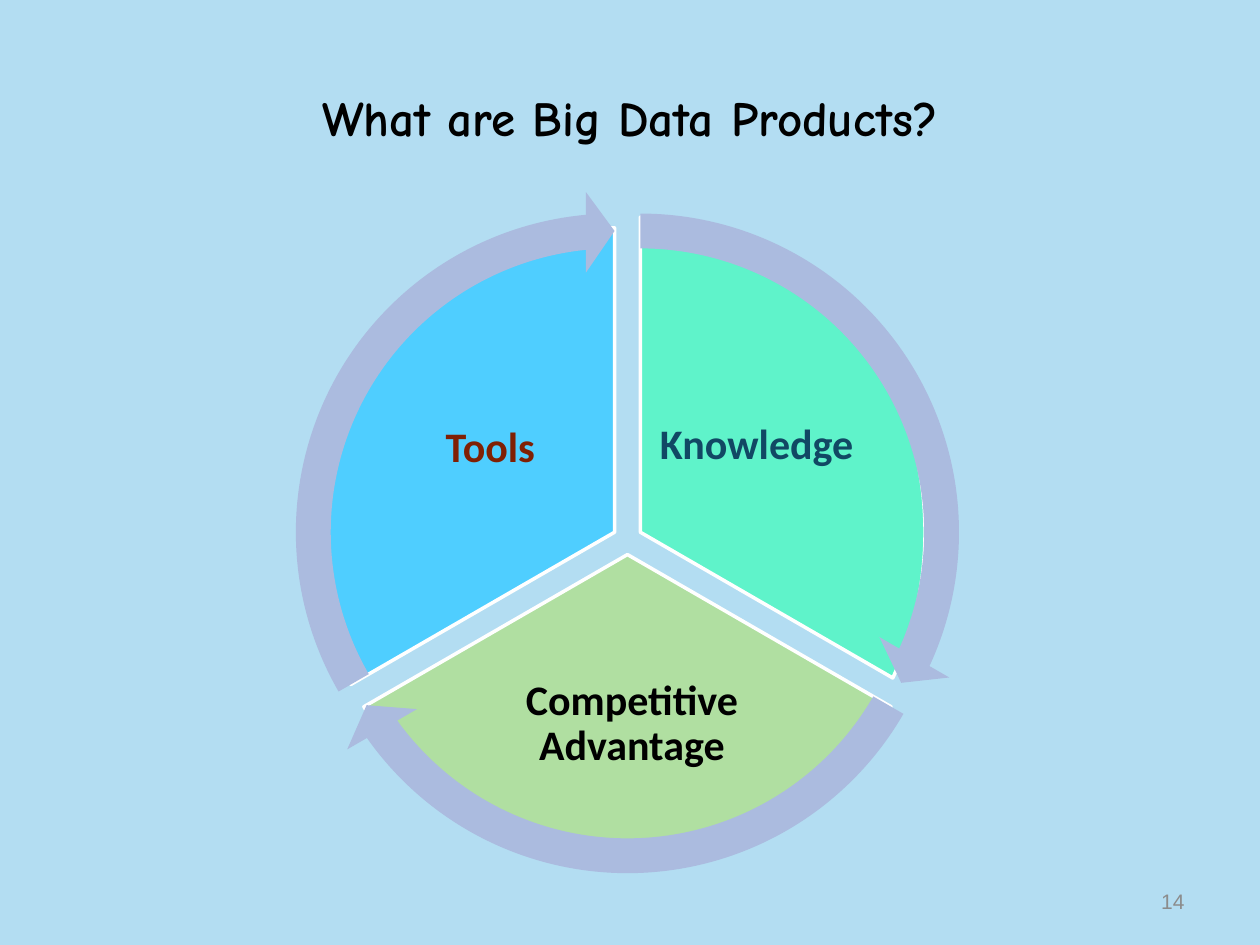
from math import cos, radians, sin

from pptx import Presentation
from pptx.dml.color import RGBColor
from pptx.enum.shapes import MSO_SHAPE
from pptx.enum.text import MSO_ANCHOR, PP_ALIGN
from pptx.util import Cm, Pt

SKY = RGBColor(0xB3, 0xDD, 0xF2)
MINT = RGBColor(0x5F, 0xF3, 0xCA)
GREEN = RGBColor(0xB0, 0xDF, 0xA1)
BLUE = RGBColor(0x4F, 0xCE, 0xFF)
LILAC = RGBColor(0xAB, 0xBB, 0xDF)
NAVY = RGBColor(0x11, 0x48, 0x64)
RUST = RGBColor(0x80, 0x20, 0x04)
GRAY = RGBColor(0x8C, 0x8C, 0x8C)
BLACK = RGBColor(0, 0, 0)
WHITE = RGBColor(0xFF, 0xFF, 0xFF)

# Angles are in degrees; shape adjustments count 0.6 to a degree.
UNIT = 0.6
TIP = 3.275
PUSH = 0.3
PIE = 12.27
RING = 13.77

# label, text colour, fill, start, end, pie size, label box within the wheel
PARTS = [
    ("Knowledge", NAVY, MINT, 270, 30, (11.48, 12.7), (7.7, 3.35, 4.09, 3.78)),
    ("Competitive Advantage", BLACK, GREEN, 30, 150, (PIE, PIE), (3.94, 9.26, 6.58, 3.2)),
    ("Tools", RUST, BLUE, 150, 270, (PIE, PIE), (2.19, 3.47, 4.37, 3.66)),
]


def place(shape, box):
    shape.left, shape.top, shape.width, shape.height = [Cm(n) for n in box]


def write(shape, text, font, size, color, bold=False, align=PP_ALIGN.CENTER):
    frame = shape.text_frame
    frame.word_wrap = True
    frame.vertical_anchor = MSO_ANCHOR.MIDDLE
    para = frame.paragraphs[0]
    para.alignment = align
    run = para.add_run()
    run.text = text
    run.font.name = font
    run.font.size = Pt(size)
    run.font.bold = bold
    run.font.color.rgb = color
    return frame


def draw(shapes, kind, mid, size, fill, adjust):
    """Add a filled shape centred on mid."""
    (x, y), (w, h) = mid, size
    shape = shapes.add_shape(kind, Cm(x - w / 2), Cm(y - h / 2), Cm(w), Cm(h))
    shape.shadow.inherit = False
    shape.fill.solid()
    shape.fill.fore_color.rgb = fill
    for i, value in enumerate(adjust):
        shape.adjustments[i] = value
    return shape


def add_label(shapes, box, text, color):
    label = shapes.add_textbox(*[Cm(n) for n in box])
    frame = write(label, text, "Calibri", 24, color, True)
    frame.margin_left = frame.margin_right = Cm(0.08)
    frame.margin_top = frame.margin_bottom = Cm(0.08)
    frame.paragraphs[0].line_spacing = 0.9


def add_wheel(slide, box):
    """Three slices pushed out from the centre, then an arrow around each."""
    left, top, width, height = box
    shapes = slide.shapes.add_group_shape().shapes
    rings = []
    for text, ink, fill, start, end, size, (x, y, w, h) in PARTS:
        turn = radians(end - 60)
        mid = (left + width / 2 + PUSH * cos(turn),
               top + height / 2 + PUSH * sin(turn))
        first, last = start * UNIT, end * UNIT
        slice_ = draw(shapes, MSO_SHAPE.PIE, mid, size, fill, (first, last))
        slice_.line.color.rgb = WHITE
        slice_.line.width = Pt(2)
        add_label(shapes, (left + x, top + y, w, h), text, ink)
        rings.append((mid, (0.051, TIP, last - TIP, first, 0.059)))
    for mid, adjust in rings:
        ring = draw(shapes, MSO_SHAPE.CIRCULAR_ARROW, mid, (RING, RING), LILAC, adjust)
        ring.line.fill.background()


def add_title(slide, box):
    title = slide.shapes.title
    place(title, box)
    write(title, "What are Big Data Products?", "Comic Neue", 28, BLACK, True)


def add_number(slide, box):
    number = slide.shapes.add_textbox(*[Cm(n) for n in box])
    write(number, "14", "Arial", 12, GRAY, align=PP_ALIGN.RIGHT)


def main():
    deck = Presentation()
    deck.slide_width, deck.slide_height = Cm(25.4), Cm(19.05)
    slide = deck.slides.add_slide(deck.slide_layouts[5])
    slide.background.fill.solid()
    slide.background.fill.fore_color.rgb = SKY
    add_title(slide, (1.27, 0.76, 22.86, 3.18))
    add_number(slide, (18.2, 17.66, 5.93, 1.01))
    add_wheel(slide, (5.51, 3.74, 14.28, 14.28))
    deck.save("out.pptx")


if __name__ == "__main__":
    main()
